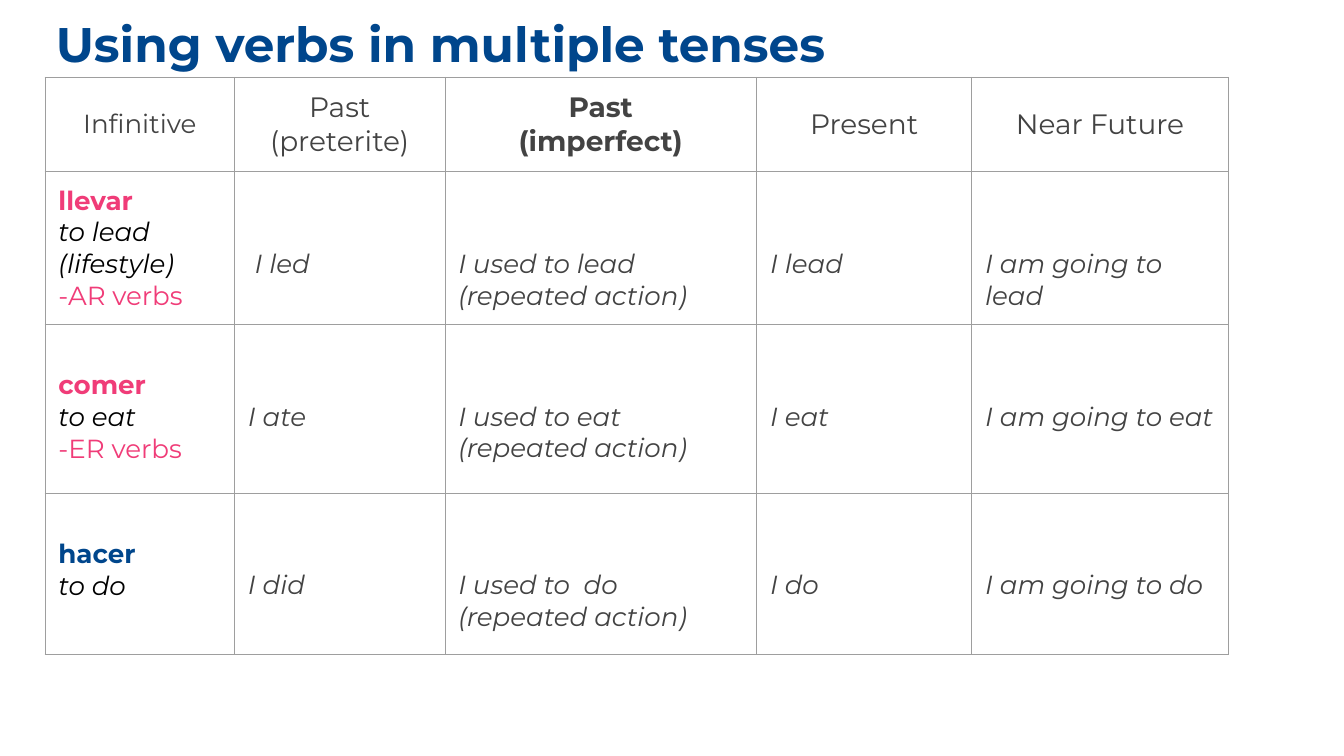
from dataclasses import dataclass

from lxml import etree
from pptx import Presentation
from pptx import util as u
from pptx.dml.color import RGBColor
from pptx.enum import text
from pptx.oxml.ns import qn

PX = 9144  # 100 px to the inch
FONT = "Montserrat"
COLORS = {"blue": "00468C", "pink": "F03C78", "grey": "434343",
          "black": "000000", "white": "FFFFFF", "border": "9E9E9E"}
INSET = 20
LINE = 47  # height of one line of body text
BODY_SIZE = 28


@dataclass
class Heading:
    label: str
    size: int = 30
    bold: bool = False


@dataclass
class Verb:
    infinitive: str
    color: str
    meaning: str
    ending: str
    lines_above: int
    tenses: tuple[str, str, str, str]
    first_indent: int = 0


HEADINGS = [
    Heading("Infinitive", size=28),
    Heading("Past (preterite)"),
    Heading("Past\n(imperfect)", bold=True),
    Heading("Present"),
    Heading("Near Future"),
]
VERBS = [
    Verb("llevar", "pink", "to lead (lifestyle)", "-AR verbs", 0,
         ("I led", "I used to lead\v(repeated action)", "I lead", "I am going to lead"),
         first_indent=10),
    Verb("comer", "pink", "to eat", "-ER verbs", 1,
         ("I ate", "I used to eat (repeated action)", "I eat", "I am going to eat")),
    Verb("hacer", "blue", "to do", "", 1,
         ("I did", "I used to  do (repeated action)", "I do", "I am going to do")),
]
COLUMN_WIDTHS = [282, 313, 464, 320, 382]
ROW_HEIGHTS = [128, 219, 251, 240]


def px(length: int) -> u.Emu:
    return u.Emu(length * PX)


def style(run, size: int, color: str, bold: bool = False, italic: bool = False) -> None:
    font = run.font
    font.name, font.size = FONT, u.Pt(size)
    font.bold, font.italic = bold, italic
    font.color.rgb = RGBColor.from_string(COLORS[color])


def frame_cell(cell, left: int = INSET, top: int = INSET) -> None:
    """Give a cell its insets, thin border and white fill."""
    cell.margin_left, cell.margin_top = px(left), px(top)
    cell.margin_right = cell.margin_bottom = px(INSET)
    properties = cell._tc.get_or_add_tcPr()
    for side in ("lnL", "lnR", "lnT", "lnB"):
        line = etree.SubElement(properties, qn(f"a:{side}"), w=str(u.Pt(0.75)))
        fill = etree.SubElement(line, qn("a:solidFill"))
        etree.SubElement(fill, qn("a:srgbClr"), val=COLORS["border"])
    cell.fill.solid()
    cell.fill.fore_color.rgb = RGBColor.from_string(COLORS["white"])


def fill_heading(cell, heading: Heading) -> None:
    frame_cell(cell)
    cell.vertical_anchor = text.MSO_ANCHOR.MIDDLE
    cell.text_frame.text = heading.label
    for paragraph in cell.text_frame.paragraphs:
        paragraph.alignment = text.PP_ALIGN.CENTER
        style(paragraph.runs[0], heading.size, "grey", bold=heading.bold)


def fill_infinitive(cell, verb: Verb) -> None:
    frame_cell(cell, top=INSET + verb.lines_above * LINE)
    cell.text_frame.text = verb.infinitive
    style(cell.text_frame.paragraphs[0].runs[0], BODY_SIZE, verb.color, bold=True)
    meaning = cell.text_frame.add_paragraph()
    meaning.text = "\v".join(filter(None, (verb.meaning, verb.ending)))
    style(meaning.runs[0], BODY_SIZE, "black", italic=True)
    for ending in meaning.runs[1:]:
        style(ending, BODY_SIZE, verb.color)


def fill_tense(cell, phrase: str, indent: int) -> None:
    frame_cell(cell, left=INSET + indent, top=INSET + 2 * LINE)
    paragraph = cell.text_frame.paragraphs[0]
    paragraph.text = phrase
    for run in paragraph.runs:
        style(run, BODY_SIZE, "grey", italic=True)


def main() -> None:
    deck = Presentation()
    deck.slide_width, deck.slide_height = px(2000), px(1125)
    slide = deck.slides.add_slide(deck.slide_layouts[6])

    # Title
    title = slide.shapes.add_textbox(px(83), px(8), px(1799), px(178)).text_frame
    title.word_wrap = True
    title.margin_left = title.margin_right = title.margin_top = title.margin_bottom = 0
    title.text = "Using verbs in multiple tenses"
    title.paragraphs[0].line_spacing = 1.15
    style(title.paragraphs[0].runs[0], 52, "blue", bold=True)

    # Table grid
    tenses = slide.shapes.add_table(
        len(ROW_HEIGHTS), len(COLUMN_WIDTHS), px(67), px(115),
        px(sum(COLUMN_WIDTHS)), px(sum(ROW_HEIGHTS))).table
    tenses.first_row = tenses.horz_banding = False
    for column, width in zip(tenses.columns, COLUMN_WIDTHS):
        column.width = px(width)
    for row, height in zip(tenses.rows, ROW_HEIGHTS):
        row.height = px(height)

    # Headings
    for column, heading in enumerate(HEADINGS):
        fill_heading(tenses.cell(0, column), heading)

    # One row per verb
    for row, verb in enumerate(VERBS, start=1):
        fill_infinitive(tenses.cell(row, 0), verb)
        for column, phrase in enumerate(verb.tenses, start=1):
            indent = verb.first_indent if column == 1 else 0
            fill_tense(tenses.cell(row, column), phrase, indent)

    deck.save("out.pptx")


if __name__ == "__main__":
    main()
